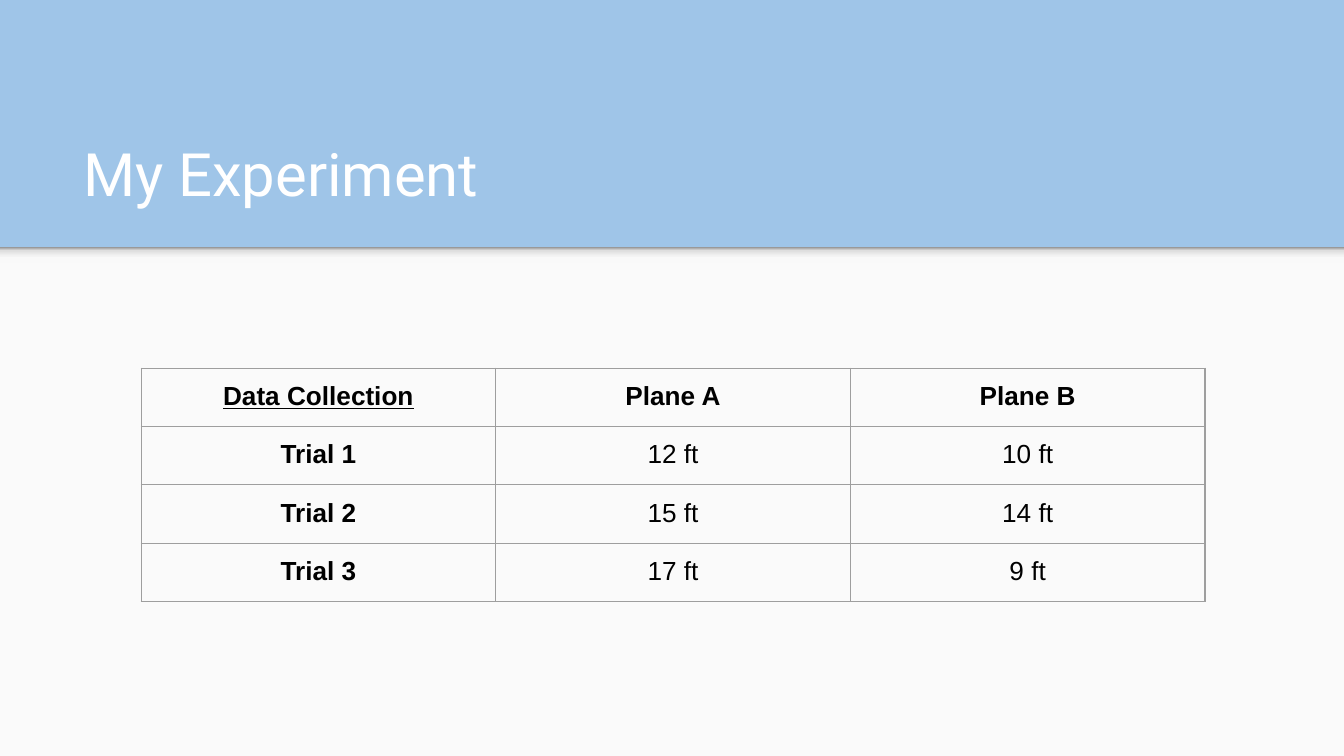
from lxml import etree
from pptx import Presentation
from pptx.dml.color import RGBColor as RGB
from pptx.enum.shapes import MSO_SHAPE as Shape
from pptx.enum.text import MSO_ANCHOR as Anchor, PP_ALIGN as Align
from pptx.oxml import parse_xml
from pptx.oxml.ns import nsdecls, qn
from pptx.util import Pt

SKY = RGB(0x9F, 0xC5, 0xE8)
PAPER = RGB(0xFA, 0xFA, 0xFA)
WHITE = RGB(0xFF, 0xFF, 0xFF)
BLACK = RGB(0, 0, 0)
GRAY = RGB(0x9E, 0x9E, 0x9E)
SHADE = [
    (0, RGB(0xF9, 0xF9, 0xF9)),
    (36, RGB(0xF9, 0xF9, 0xF9)),
    (80, RGB(0xDE, 0xDE, 0xDE)),
    (100, RGB(0x99, 0x99, 0x99)),
]
WIDE, HIGH = 720, 405
EDGE = 132.5  # where the header band ends
PAD = Pt(7.2)

DATA = [
    ["Data Collection", "Plane A", "Plane B"],
    ["Trial 1", "12 ft", "10 ft"],
    ["Trial 2", "15 ft", "14 ft"],
    ["Trial 3", "17 ft", "9 ft"],
]


def add_rect(slide, box):
    rect = slide.shapes.add_shape(Shape.RECTANGLE, *map(Pt, box))
    rect.shadow.inherit = False
    rect.line.fill.background()
    return rect


def add_panel(slide, box):
    """Pale body panel with a soft shade along its top edge."""
    x, y, w, h = box
    panel = add_rect(slide, box)
    panel.fill.solid()
    panel.fill.fore_color.rgb = PAPER

    shade = add_rect(slide, (x, y, w, 8.64))
    shade.fill.gradient()
    shade.fill.gradient_angle = 90  # upwards, darkest at the top
    stops = shade.fill._fill._gradFill.find(qn("a:gsLst"))
    for stop in list(stops):
        stops.remove(stop)
    for pos, color in SHADE:
        stops.append(parse_xml(
            f'<a:gs {nsdecls("a")} pos="{pos * 1000}">'
            f'<a:srgbClr val="{color}"/></a:gs>'))


def add_title(slide, box, text):
    frame = slide.shapes.add_textbox(*map(Pt, box)).text_frame
    frame.word_wrap = True
    frame.vertical_anchor = Anchor.BOTTOM
    frame.margin_left = frame.margin_right = PAD
    frame.margin_top = frame.margin_bottom = PAD
    para = frame.paragraphs[0]
    para.text = text
    para.font.size = Pt(32)
    para.font.name = "Roboto"
    para.font.color.rgb = WHITE


def add_border(cell):
    props = cell._tc.get_or_add_tcPr()
    for i, side in enumerate("LRTB"):  # lines come before the fill
        line = etree.Element(qn(f"a:ln{side}"), w=str(Pt(0.75)))
        fill = etree.SubElement(line, qn("a:solidFill"))
        etree.SubElement(fill, qn("a:srgbClr"), val=str(GRAY))
        props.insert(i, line)


def add_data(slide, box, data):
    """Table of trials; the first row and column are bold."""
    table = slide.shapes.add_table(len(data), len(data[0]),
                                   *map(Pt, box)).table
    table.first_row = table.horz_banding = False
    for r, row in enumerate(data):
        for c, text in enumerate(row):
            cell = table.cell(r, c)
            cell.fill.background()
            add_border(cell)
            cell.margin_left = cell.margin_right = PAD
            cell.margin_top = cell.margin_bottom = PAD
            para = cell.text_frame.paragraphs[0]
            para.text = text
            para.alignment = Align.CENTER
            font = para.font
            font.name = "Arial"
            font.size = Pt(14)
            font.color.rgb = BLACK
            font.bold = r == 0 or c == 0
            font.underline = r == 0 and c == 0


def main():
    deck = Presentation()
    deck.slide_width, deck.slide_height = Pt(WIDE), Pt(HIGH)
    slide = deck.slides.add_slide(deck.slide_layouts[6])
    back = slide.background.fill
    back.solid()
    back.fore_color.rgb = SKY

    add_panel(slide, (0, EDGE, WIDE, HIGH - EDGE))
    add_title(slide, (37.4, 58.3, 647.3, 60.5), "My Experiment")
    add_data(slide, (75.6, 197.3, 570, 120.6), DATA)
    deck.save("out.pptx")


if __name__ == "__main__":
    main()
